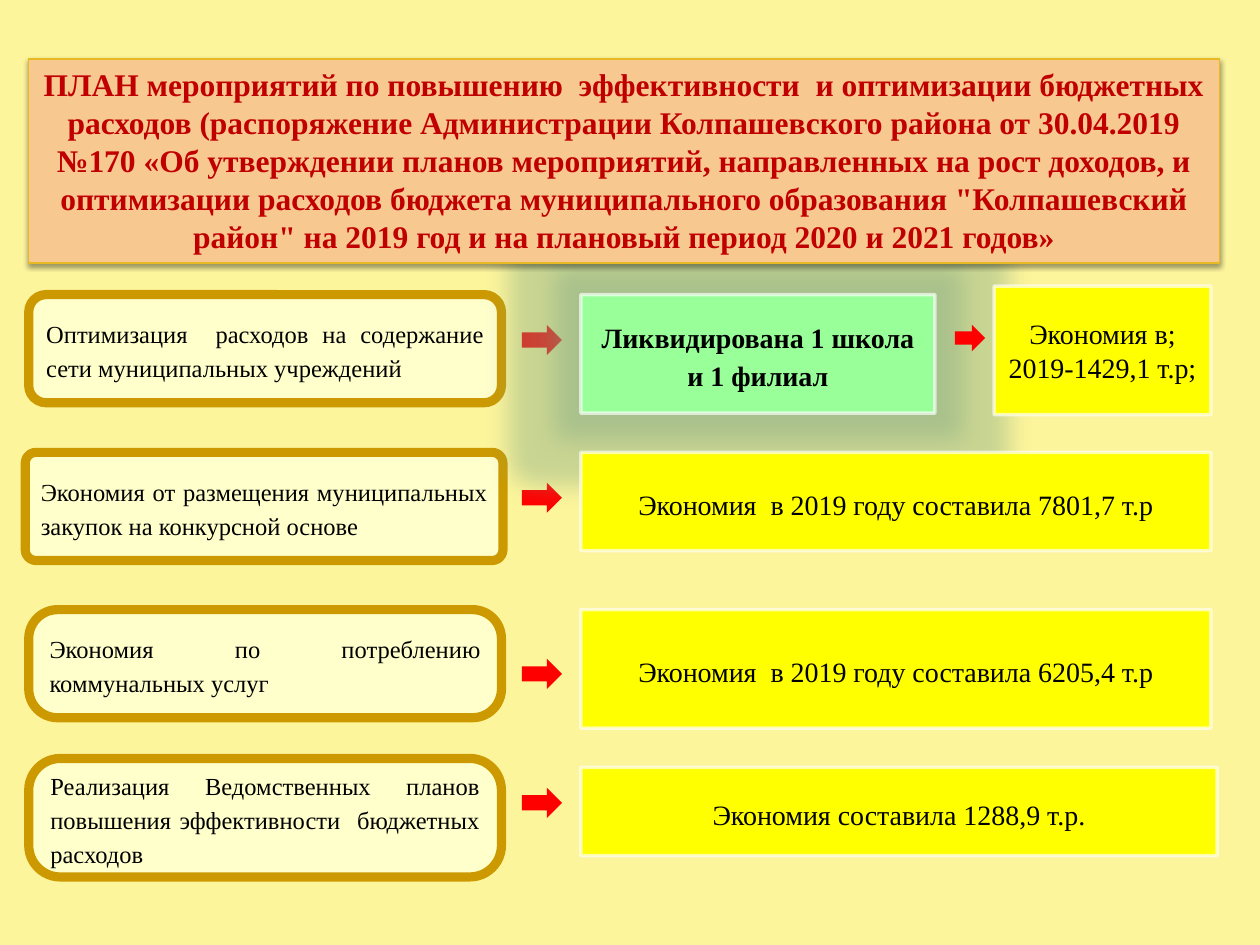
from lxml.etree import SubElement as Sub
from pptx import Presentation as Deck
from pptx.dml.color import RGBColor as Rgb
from pptx.enum.shapes import MSO_SHAPE as Kind
from pptx.enum.text import MSO_ANCHOR as Anchor, MSO_AUTO_SIZE as Fit, PP_ALIGN as Align
from pptx.oxml.ns import qn
from pptx.util import Cm, Pt

HEAD = (
    "ПЛАН мероприятий по повышению  эффективности  и оптимизации бюджетных расходов "
    "(распоряжение Администрации Колпашевского района от 30.04.2019 №170 "
    "«Об утверждении планов мероприятий, направленных на рост доходов, и оптимизации "
    "расходов бюджета муниципального образования \"Колпашевский район\" "
    "на 2019 год и на плановый период 2020 и 2021 годов»"
)
GOALS = [
    ((0.58, 5.94, 9.53, 2.18), 0.161,
     "Оптимизация  расходов на содержание сети муниципальных учреждений"),
    ((0.51, 9.12, 9.63, 2.18), 0.1,
     "Экономия от размещения муниципальных закупок на конкурсной основе"),
    ((0.58, 12.29, 9.53, 2.18), 0.267,
     "Экономия по потреблению коммунальных услуг"),
    ((0.58, 15.29, 9.53, 2.39), 0.267,
     "Реализация Ведомственных планов повышения эффективности  бюджетных расходов"),
]
GAINS = [
    ((20.04, 5.77, 4.37, 2.59), 1.0, "Экономия в; 2019-1429,1 т.р;"),
    ((11.71, 9.12, 12.7, 1.98), 1.15, "Экономия  в 2019 году составила 7801,7 т.р"),
    ((11.71, 12.29, 12.7, 2.39), 1.15, "Экономия  в 2019 году составила 6205,4 т.р"),
    ((11.71, 15.47, 12.83, 1.78), 1.15, "Экономия составила 1288,9 т.р."),
]
ARROWS = [(10.52, top, 0.81, 0.61) for top in (6.55, 9.73, 13.28, 15.88)]
FONT = {"name": "Times New Roman", "bold": False}


def paint(form, tone):
    """Give a fill one solid colour from a hex string."""
    form.solid()
    form.fore_color.rgb = Rgb.from_string(tone)


def assign(item, vals):
    """Set each attribute of an item from a dict."""
    for key, val in vals.items():
        setattr(item, key, val)


def fade(node, alpha):
    """Make a colour element partly opaque, in percent."""
    Sub(node, qn("a:alpha"), val=str(alpha * 1000))


def effect(shape, tag, tone, alpha, **vals):
    """Add a glow or a shadow to a shape."""
    host = shape._element.spPr.find(qn("a:effectLst"))
    node = Sub(host, qn(tag), {key: str(val) for key, val in vals.items()})
    fade(Sub(node, qn("a:srgbClr"), val=tone), alpha)


def style(shape, fill, line=None, width=0):
    """Set the fill and outline of a shape, without a shadow."""
    shape.shadow.inherit = False
    paint(shape.fill, fill)
    if line:
        paint(shape.line.fill, line)
        shape.line.width = Pt(width)
    else:
        shape.line.fill.background()


def write(shape, text, size, align, gap=1.15, tone="000000", **vals):
    """Put one formatted paragraph into a shape."""
    frame = shape.text_frame
    assign(frame, {"text": text, "word_wrap": True, "vertical_anchor": Anchor.MIDDLE})
    para = frame.paragraphs[0]
    assign(para, {"alignment": align, "line_spacing": gap})
    assign(para.font, FONT | {"size": Pt(size)} | vals)
    paint(para.font.fill, tone)


def place(slide, kind, area):
    """Add a preset shape at an area in centimetres."""
    return slide.shapes.add_shape(kind, *map(Cm, area))


def arrow(slide, area):
    """Add a red arrow."""
    style(place(slide, Kind.RIGHT_ARROW, area), "FF0000")


def goal(slide, area, curve, text):
    """Add a rounded box that names a measure."""
    box = place(slide, Kind.ROUNDED_RECTANGLE, area)
    box.adjustments[0] = curve
    style(box, "FFFFCC", "CC9900", 5.25)
    write(box, text, 14, Align.JUSTIFY)


def result(slide, area, gap, text, fill="FFFF00", bold=False):
    """Add a box that states an outcome."""
    box = place(slide, Kind.RECTANGLE, area)
    style(box, fill, "FFFFFF", 2)
    fade(box.line._ln.find(".//" + qn("a:srgbClr")), 66)
    write(box, text, 16, Align.CENTER, gap, bold=bold)
    return box


def banner(slide):
    """Format the title and bring it to the front."""
    title = slide.shapes.title
    spots = map(Cm, (0.58, 1.19, 24, 4.11))
    assign(title, dict(zip(("left", "top", "width", "height"), spots)))
    style(title, "F8C891", "E7BA23", 0.75)
    effect(title, "a:outerShdw", "000000", 38, blurRad=Pt(3.1), dist=Pt(1.6), dir=5400000)
    write(title, HEAD, 18, Align.CENTER, 1.0, "C00000", bold=True)
    assign(title.text_frame, {"vertical_anchor": Anchor.TOP, "auto_size": Fit.SHAPE_TO_FIT_TEXT})
    slide.shapes._spTree.append(title._element)


def main():
    """Build and save the slide."""
    deck = Deck()
    assign(deck, {"slide_width": Cm(25.4), "slide_height": Cm(19.05)})
    slide = deck.slides.add_slide(deck.slide_layouts[5])
    paint(slide.background.fill, "FDF59C")
    for area in ARROWS:
        arrow(slide, area)
    for row in GOALS:
        goal(slide, *row)
    step = result(slide, (11.71, 5.94, 7.14, 2.39), 1.15,
                  "Ликвидирована 1 школа и 1 филиал", "99FF99", True)
    effect(step, "a:glow", "7BA583", 40, rad=Pt(28))
    arrow(slide, (19.25, 6.55, 0.61, 0.53))
    for row in GAINS:
        result(slide, *row)
    banner(slide)
    deck.save("out.pptx")


if __name__ == "__main__":
    main()
